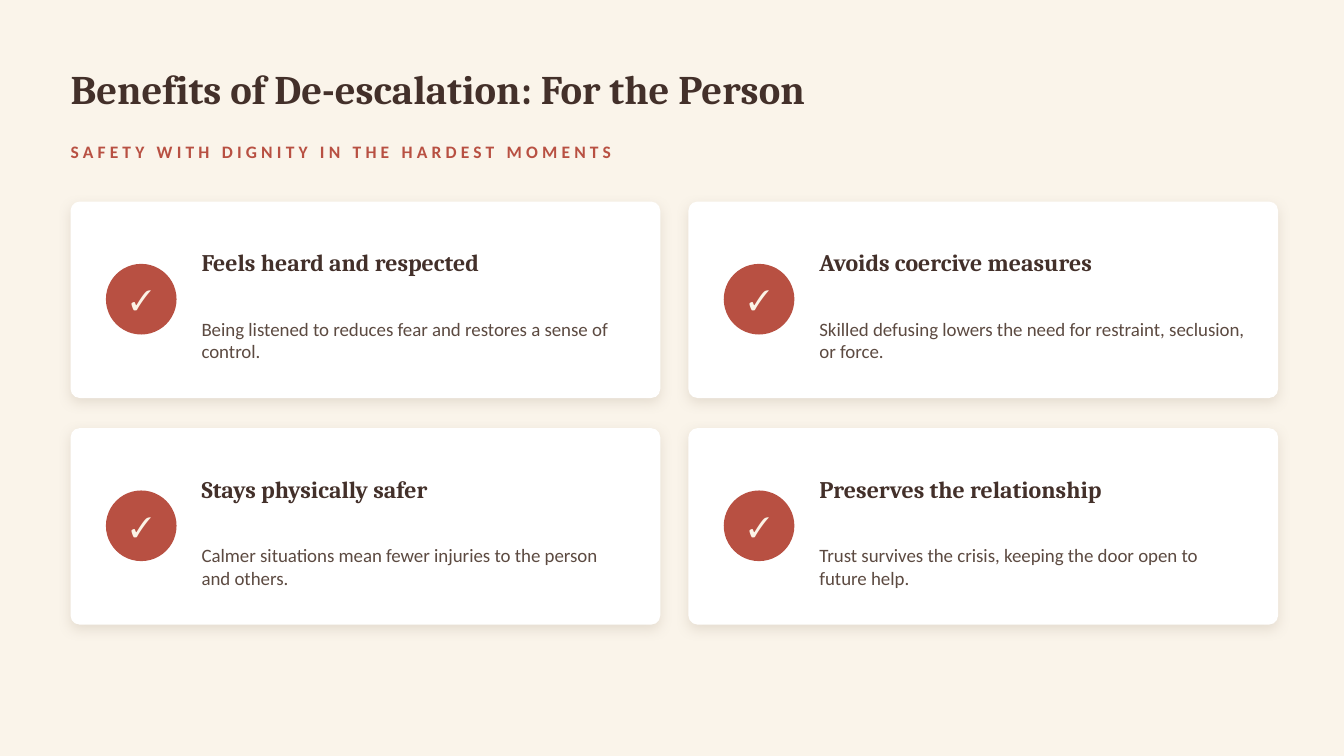
from lxml import etree
from pptx import Presentation
from pptx.dml.color import RGBColor
from pptx.enum.shapes import MSO_SHAPE
from pptx.enum.text import MSO_ANCHOR, PP_ALIGN
from pptx.oxml.ns import qn
from pptx.util import Cm, Pt

# Content
TITLE = "Benefits of De-escalation: For the Person"
SUBTITLE = "SAFETY WITH DIGNITY IN THE HARDEST MOMENTS"
BENEFITS = [
    ("Feels heard and respected",
     "Being listened to reduces fear and restores a sense of control."),
    ("Avoids coercive measures",
     "Skilled defusing lowers the need for restraint, seclusion, or force."),
    ("Stays physically safer",
     "Calmer situations mean fewer injuries to the person and others."),
    ("Preserves the relationship",
     "Trust survives the crisis, keeping the door open to future help."),
]

# Style
CREAM = RGBColor(0xFA, 0xF4, 0xEA)
WHITE = RGBColor(0xFF, 0xFF, 0xFF)
BROWN = RGBColor(0x43, 0x30, 0x2A)
BODY_BROWN = RGBColor(0x5C, 0x4A, 0x41)
TERRACOTTA = RGBColor(0xB8, 0x50, 0x42)
TICK_CREAM = RGBColor(0xFB, 0xF3, 0xE6)
SHADOW = RGBColor(0x9A, 0x88, 0x73)
SERIF, SANS = "Cambria", "Calibri"
ROUNDED, OVAL = MSO_SHAPE.ROUNDED_RECTANGLE, MSO_SHAPE.OVAL
MIDDLE = MSO_ANCHOR.MIDDLE
LEFT, CENTER = PP_ALIGN.LEFT, PP_ALIGN.CENTER

# Layout in centimetres
MARGIN, TEXT_WIDTH = 1.78, 30.23
GRID_TOP, COLUMNS = 5.08, 2
CARD_WIDTH, CARD_HEIGHT = 14.86, 4.95
GAP_X, GAP_Y = 0.71, 0.76
BADGE = 1.78


def add_text(slide, text, box, font_name, size, color, bold=True, align=LEFT):
    shape = slide.shapes.add_textbox(*map(Cm, box))
    frame = shape.text_frame
    frame.word_wrap = True
    frame.vertical_anchor = MIDDLE
    frame.margin_left = frame.margin_right = 0
    frame.margin_top = frame.margin_bottom = 0
    paragraph = frame.paragraphs[0]
    paragraph.text = text
    paragraph.alignment = align
    font = paragraph.font
    font.name, font.size, font.bold = font_name, Pt(size), bold
    font.color.rgb = color
    return paragraph


def add_plain_shape(slide, kind, box, color):
    shape = slide.shapes.add_shape(kind, *map(Cm, box))
    shape.fill.solid()
    shape.fill.fore_color.rgb = color
    shape.line.fill.background()
    shape.shadow.inherit = False
    return shape


def add_soft_shadow(shape):
    effects = shape._element.spPr.find(qn("a:effectLst"))
    shadow = etree.SubElement(
        effects, qn("a:outerShdw"), blurRad=str(Pt(9)), dist=str(Pt(3)),
        dir="5400000", algn="ctr", rotWithShape="0")
    color = etree.SubElement(shadow, qn("a:srgbClr"), val=str(SHADOW))
    etree.SubElement(color, qn("a:alpha"), val="22000")


def add_card(slide, left, top, heading, body):
    card = add_plain_shape(slide, ROUNDED, (left, top, CARD_WIDTH, CARD_HEIGHT), WHITE)
    card.adjustments[0] = 0.046
    add_soft_shadow(card)

    # Badge with tick
    badge_box = (left + 0.89, top + 1.57, BADGE, BADGE)
    add_plain_shape(slide, OVAL, badge_box, TERRACOTTA)
    add_text(slide, "✓", badge_box, SERIF, 20, TICK_CREAM, align=CENTER)

    # Heading and explanation
    text_left = left + 3.3
    add_text(slide, heading, (text_left, top + 0.76, 10.8, 1.52), SERIF, 17, BROWN)
    add_text(slide, body, (text_left, top + 2.41, 10.8, 2.16), SANS, 13.5,
             BODY_BROWN, bold=False)


def main():
    presentation = Presentation()
    presentation.slide_width, presentation.slide_height = Cm(33.87), Cm(19.05)
    slide = presentation.slides.add_slide(presentation.slide_layouts[6])
    slide.background.fill.solid()
    slide.background.fill.fore_color.rgb = CREAM

    # Title and letter-spaced subtitle
    add_text(slide, TITLE, (MARGIN, 1.14, TEXT_WIDTH, 2.16), SERIF, 29, BROWN)
    subtitle = add_text(slide, SUBTITLE, (MARGIN, 3.43, TEXT_WIDTH, 0.76),
                        SANS, 12.5, TERRACOTTA)
    subtitle.runs[0]._r.get_or_add_rPr().set("spc", "300")

    # Grid of benefit cards
    for index, (heading, body) in enumerate(BENEFITS):
        row, column = divmod(index, COLUMNS)
        add_card(slide, MARGIN + column * (CARD_WIDTH + GAP_X),
                 GRID_TOP + row * (CARD_HEIGHT + GAP_Y), heading, body)

    presentation.save("out.pptx")


if __name__ == "__main__":
    main()
